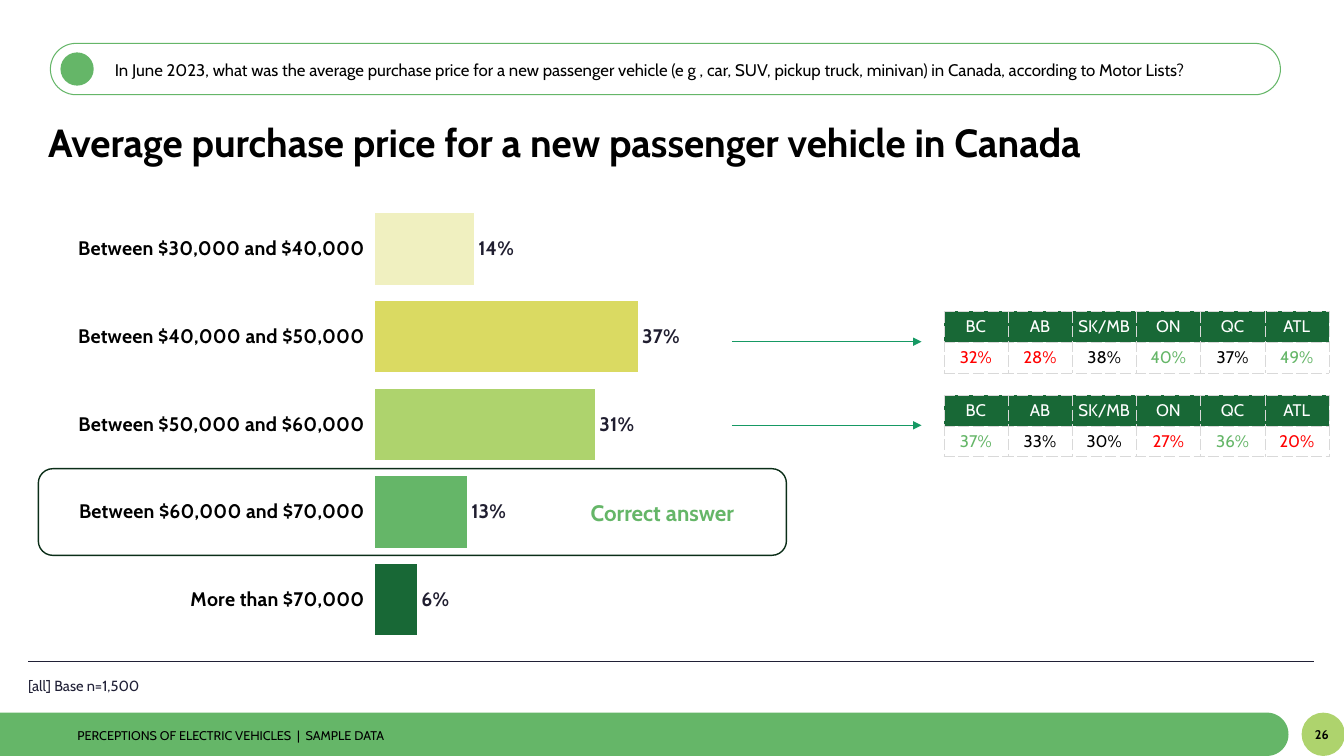
import math
from dataclasses import dataclass
from lxml import etree
from pptx import Presentation
from pptx import util as u
from pptx.chart.data import CategoryChartData
from pptx.dml.color import RGBColor
from pptx.enum import chart as ch, shapes, text
from pptx.oxml import parse_xml
from pptx.oxml.ns import nsdecls, qn

Inches, Pt = u.Inches, u.Pt


@dataclass(frozen=True)
class Theme:
    font: str = "Cabin"
    black: str = "000000"
    white: str = "FFFFFF"
    ink: str = "202036"
    value: str = "201E30"
    green: str = "65B668"
    lime: str = "AED36D"
    cream: str = "F0F0C0"
    olive: str = "DADA62"
    dark: str = "186836"
    frame: str = "0B2E18"
    arrow: str = "169964"
    red: str = "FF0000"
    edge: str = "D9D9D9"
    tiny: float = 9
    note: float = 10.5
    body: float = 12
    label: float = 14
    answer: float = 16
    title: float = 28


def rgb(color):
    return RGBColor.from_string(color)


class Deck:
    def __init__(self, theme):
        self.theme = theme
        self.file = Presentation()
        self.file.slide_width = Inches(13.33)
        self.file.slide_height = Inches(7.5)
        self.slide = self.file.slides.add_slide(self.file.slide_layouts[6])
        self.items = self.slide.shapes

    def style(self, font, size, color, bold=False):
        font.name, font.size, font.bold = self.theme.font, Pt(size), bold
        font.color.rgb = rgb(color)

    def paint(self, item, fill=None, line=None, width=1):
        item.shadow.inherit = False
        if fill:
            item.fill.solid()
            item.fill.fore_color.rgb = rgb(fill)
        else:
            item.fill.background()
        if line:
            item.line.color.rgb = rgb(line)
            item.line.width = Pt(width)
        else:
            item.line.fill.background()

    def shape(self, kind, box, adjust=None, **look):
        item = self.items.add_shape(kind, *map(Inches, box))
        if adjust is not None:
            item.adjustments[0] = adjust
        self.paint(item, **look)

    def band(self, top, right, height, fill):
        """Draw a bar from the left edge with a half-round right end."""
        r = height / 2
        turns = [math.radians(a) for a in range(-90, 91, 5)]
        curve = [(right - r + r * math.cos(a), top + r + r * math.sin(a)) for a in turns]
        path = self.items.build_freeform(0, Inches(top), scale=1.0)
        path.add_line_segments([(Inches(x), Inches(y)) for x, y in curve]
                               + [(0, Inches(top + height))])
        self.paint(path.convert_to_shape(), fill)

    def text(self, words, box, size, color, bold=False, center=False,
             middle=False, lead=None):
        frame = self.items.add_textbox(*map(Inches, box)).text_frame
        frame.word_wrap = True
        if middle:
            frame.vertical_anchor = text.MSO_ANCHOR.MIDDLE
        frame.text = words
        para = frame.paragraphs[0]
        para.line_spacing = lead
        if center:
            para.alignment = text.PP_ALIGN.CENTER
        self.style(para.runs[0].font, size, color, bold)

    def line(self, start, end, color, width, arrow=False):
        item = self.items.add_connector(
            shapes.MSO_CONNECTOR.STRAIGHT, *map(Inches, start + end))
        item.line.color.rgb = rgb(color)
        item.line.width = Pt(width)
        if arrow:
            etree.SubElement(item.line._get_or_add_ln(), qn("a:tailEnd"), type="triangle")
        etree.SubElement(item._element.spPr, qn("a:effectLst"))

    def chart(self, box, bars):
        t = self.theme
        data = CategoryChartData(number_format="0%")
        data.categories = [name for name, _, _ in bars]
        data.add_series("Series 1", [value for _, value, _ in bars])
        chart = self.items.add_chart(
            ch.XL_CHART_TYPE.BAR_CLUSTERED, *map(Inches, box), data).chart
        chart.has_legend = chart.has_title = False
        self.style(chart.font, t.answer, t.black, True)

        names, scale = chart.category_axis, chart.value_axis
        names.reverse_order = True
        names.format.line.fill.background()
        self.style(names.tick_labels.font, t.label, t.black, True)
        scale.minimum_scale, scale.maximum_scale = 0, 1
        scale.has_major_gridlines = scale.visible = False

        plot = chart.plots[0]
        plot.gap_width, plot.vary_by_categories = 23, False
        for point, (_, _, color) in enumerate(bars):
            fill = plot.series[0].points[point].format.fill
            fill.solid()
            fill.fore_color.rgb = rgb(color)
        plot.has_data_labels = True
        labels = plot.data_labels
        labels.show_value = True
        labels.position = ch.XL_LABEL_POSITION.OUTSIDE_END
        labels.number_format, labels.number_format_is_linked = "0%", False
        self.style(labels.font, t.label, t.value, True)
        self.place(chart, x=0.316, y=0.033, w=0.669, h=0.934)

    def place(self, chart, **spot):
        """Fix the inner plot area as fractions of the chart."""
        area = chart._chartSpace.chart.plotArea
        for old in area.findall(qn("c:layout")):
            area.remove(old)
        sizes = "".join(f'<c:{k} val="{v}"/>' for k, v in spot.items())
        area.insert(0, parse_xml(
            f'<c:layout {nsdecls("c")}><c:manualLayout><c:layoutTarget val="inner"/>'
            f'<c:xMode val="edge"/><c:yMode val="edge"/>{sizes}'
            '</c:manualLayout></c:layout>'))

    def table(self, box, heads, cells):
        t = self.theme
        rows = [[(head, t.white) for head in heads], cells]
        grid = self.items.add_table(len(rows), len(heads), *map(Inches, box)).table
        grid.first_row = grid.horz_banding = False
        for r, row in enumerate(rows):
            for c, (words, color) in enumerate(row):
                cell = grid.cell(r, c)
                cell.margin_left = cell.margin_right = 0
                cell.margin_top = cell.margin_bottom = 0
                cell.vertical_anchor = text.MSO_ANCHOR.MIDDLE
                self.border(cell)
                if r == 0:
                    cell.fill.solid()
                    cell.fill.fore_color.rgb = rgb(t.dark)
                else:
                    cell.fill.background()
                cell.text_frame.text = words
                para = cell.text_frame.paragraphs[0]
                para.alignment = text.PP_ALIGN.CENTER
                self.style(para.runs[0].font, t.body, color)

    def border(self, cell):
        for side in "LRTB":
            cell._tc.get_or_add_tcPr().append(parse_xml(
                f'<a:ln{side} {nsdecls("a")} w="{Pt(0.25)}"><a:solidFill>'
                f'<a:srgbClr val="{self.theme.edge}"/></a:solidFill>'
                f'<a:prstDash val="lgDash"/></a:ln{side}>'))


def main():
    t = Theme()
    deck = Deck(t)
    oval = shapes.MSO_SHAPE.OVAL
    round_box = shapes.MSO_SHAPE.ROUNDED_RECTANGLE

    deck.band(7.07, 12.78, 0.43, t.green)
    deck.shape(oval, (12.91, 7.07, 0.43, 0.43), fill=t.lime)
    deck.text("26", (12.83, 7.08, 0.56, 0.43), t.tiny, t.black,
              bold=True, center=True, middle=True, lead=0.9)
    deck.text("PERCEPTIONS OF ELECTRIC VEHICLES  |  SAMPLE DATA",
              (0.67, 7.19, 9.57, 0.21), t.tiny, t.black, lead=0.9)
    deck.shape(round_box, (0.5, 0.43, 12.2, 0.51), 0.5, line=t.green, width=0.75)
    deck.shape(oval, (0.6, 0.52, 0.33, 0.33), fill=t.green)
    deck.line((0.28, 6.56), (13.03, 6.56), t.ink, 0.5)
    deck.text("In June 2023, what was the average purchase price for a new passenger "
              "vehicle (e g , car, SUV, pickup truck, minivan) in Canada, "
              "according to Motor Lists?",
              (1.04, 0.54, 11.54, 0.3), t.body, t.black, middle=True)
    deck.text("Average purchase price for a new passenger vehicle in Canada",
              (0.38, 1.14, 12.2, 0.6), t.title, t.black,
              bold=True, middle=True, lead=0.9)
    deck.text("[all] Base n=1,500", (0.18, 6.69, 10.56, 0.33), t.note, t.ink, lead=0.9)

    deck.chart((0.38, 1.88, 10.56, 4.66), [
        ("Between $30,000 and $40,000", 0.14, t.cream),
        ("Between $40,000 and $50,000", 0.37, t.olive),
        ("Between $50,000 and $60,000", 0.31, t.lime),
        ("Between $60,000 and $70,000", 0.13, t.green),
        ("More than $70,000", 0.06, t.dark)])
    deck.text("Correct answer", (5.58, 4.9, 1.98, 0.37), t.answer, t.green,
              bold=True, center=True)
    deck.shape(round_box, (0.38, 4.65, 7.42, 0.86), line=t.frame)

    heads = ["BC", "AB", "SK/MB", "ON", "QC", "ATL"]
    low, mid, high = t.red, t.black, t.green
    splits = [
        (3.09, [("32%", low), ("28%", low), ("38%", mid),
                ("40%", high), ("37%", mid), ("49%", high)]),
        (3.92, [("37%", high), ("33%", mid), ("30%", mid),
                ("27%", low), ("36%", high), ("20%", low)])]
    for top, cells in splits:
        deck.line((7.26, top + 0.3), (9.14, top + 0.3), t.arrow, 1, arrow=True)
        deck.table((9.36, top, 3.82, 0.61), heads, cells)

    deck.file.save("out.pptx")


if __name__ == "__main__":
    main()
